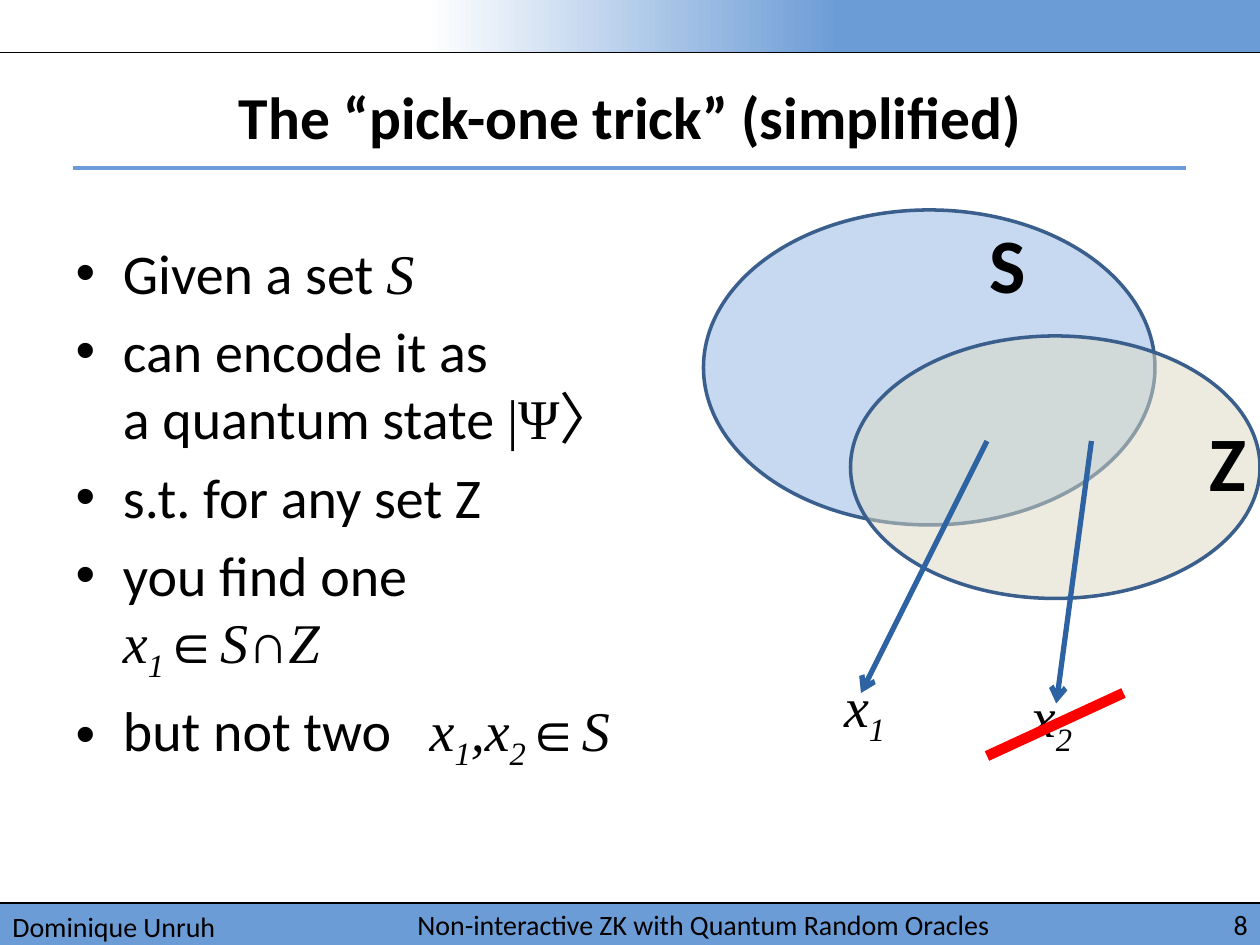
from lxml.etree import SubElement
from pptx import Presentation
from pptx.dml.color import RGBColor
from pptx.enum.shapes import MSO_CONNECTOR, MSO_SHAPE
from pptx.enum.text import MSO_ANCHOR, MSO_AUTO_SIZE, PP_ALIGN
from pptx.oxml.ns import qn
from pptx.util import Inches, Pt

# Grid of 120 columns by 90 rows, twelve to the inch
COLS, ROWS = 120, 90
UNIT = Inches(10) // COLS
SANS, SERIF = "Calibri", "Times New Roman"
BLUE, EDGE, ARROW = "6C9CD6", "3A5F8C", "2D63A2"
GAP = 1450  # extra width of a wide space, in hundredths of a point


def grid(*cells):
    return [round(cell * UNIT) for cell in cells]


def color(code):
    return RGBColor.from_string(code)


def style(font, size, name=SANS, bold=None, italic=None):
    font.size, font.name = Pt(size), name
    font.bold, font.italic = bold, italic
    font.color.rgb = color("000000")


def shape(slide, kind, box, fill=None, edge=None, alpha=None):
    form = slide.shapes.add_shape(kind, *grid(*box))
    form.shadow.inherit = False
    if fill:
        form.fill.solid()
        form.fill.fore_color.rgb = color(fill)
    if alpha:
        tint = form.fill._xPr.find(".//" + qn("a:srgbClr"))
        SubElement(tint, qn("a:alpha"), val=str(alpha * 1000))
    if edge:
        form.line.color.rgb = color(edge)
        form.line.width = Pt(2)
    else:
        form.line.fill.background()
    return form


def line(slide, ends, code, width, head=False):
    rule = slide.shapes.add_connector(MSO_CONNECTOR.STRAIGHT, *grid(*ends))
    rule.line.color.rgb = color(code)
    rule.line.width = Pt(width)
    if head:
        SubElement(rule.line._get_or_add_ln(), qn("a:tailEnd"), type="arrow")
    SubElement(rule._element.spPr, qn("a:effectLst"))


def label(slide, box, text, size, bold=None, align=PP_ALIGN.LEFT,
          anchor=MSO_ANCHOR.TOP, wrap=True):
    frame = slide.shapes.add_textbox(*grid(*box)).text_frame
    frame.word_wrap, frame.vertical_anchor = wrap, anchor
    frame.text = text
    para = frame.paragraphs[0]
    para.alignment = align
    style(para.runs[0].font, size, bold=bold)


def write(para, parts):
    """Add runs: plain, upright serif (r), italic (i), subscript (s), gap (g)."""
    for kind, text in parts:
        if kind == "br":
            para.add_line_break()
            continue
        run = para.add_run()
        run.text = text
        name = SERIF if kind in "ris" else SANS
        style(run.font, 32, name, italic=kind in "is")
        if kind == "s":
            run.font._element.set("baseline", "-25000")
        if kind == "g":
            run.font._element.set("spc", str(GAP))


def place(form, box):
    form.left, form.top, form.width, form.height = grid(*box)
    form.text_frame.auto_size = MSO_AUTO_SIZE.NONE
    return form.text_frame


def banner(slide, box):
    left, top, width, height = box
    form = shape(slide, MSO_SHAPE.RECTANGLE, (left + 32.75, top, width - 32.75, height))
    form.fill.gradient()
    form.fill.gradient_angle = 0
    for stop, (spot, code) in zip(form.fill.gradient_stops, [(0.09, "FFFFFF"), (0.54, BLUE)]):
        stop.position, stop.color.rgb = spot, color(code)
    line(slide, (left, top + height, left + width, top + height), "000000", 0.75)


def footer(slide, box):
    left, top, width, height = box
    shape(slide, MSO_SHAPE.RECTANGLE, box, BLUE)
    line(slide, (left, top, left + width, top), "000000", 0.75)
    mid = MSO_ANCHOR.MIDDLE
    label(slide, (left, top, 32.75, height), "Dominique Unruh", 16)
    label(slide, (left + 29, top, 76, height),
          "Non-interactive ZK with Quantum Random Oracles", 16,
          align=PP_ALIGN.CENTER, anchor=mid)
    label(slide, (left + width - 8, top, 8, height), "8", 16,
          align=PP_ALIGN.RIGHT, anchor=mid)


def heading(slide, box):
    left, top, width, height = box
    frame = place(slide.shapes.title, box)
    frame.text = "The “pick-one trick” (simplified)"
    frame.vertical_anchor = MSO_ANCHOR.MIDDLE
    para = frame.paragraphs[0]
    para.alignment = PP_ALIGN.CENTER
    style(para.runs[0].font, 34, bold=True)
    line(slide, (left, top + height, left + width, top + height), BLUE, 2)


def points(slide, box):
    frame = place(slide.placeholders[1], box)
    frame.margin_top = Inches(0.14)
    items = [
        [("p", "Given a set "), ("i", "S")],
        [("p", "can encode it as"), ("br", ""), ("p", "a quantum state "), ("r", "|Ψ〉")],
        [("p", "s.t. for any set Z")],
        [("p", "you find one"), ("br", ""), ("i", "x"), ("s", "1"),
         ("r", "∈"), ("i", "S"), ("r", "∩"), ("i", "Z")],
        [("p", "but not two"), ("g", " "), ("i", "x"), ("s", "1"),
         ("i", ",x"), ("s", "2"), ("r", "∈"), ("i", "S")],
    ]
    for index, parts in enumerate(items):
        para = frame.add_paragraph() if index else frame.paragraphs[0]
        if not index:
            para.space_before = Pt(0)
        write(para, parts)


def venn(slide, box):
    left, top, width, height = box
    # Overlapping sets
    shape(slide, MSO_SHAPE.OVAL, (left, top, 43, 30), "C6D9F1", EDGE)
    label(slide, (left + 26.1, top, 5.9, 10), "S", 44, bold=True, wrap=False)
    shape(slide, MSO_SHAPE.OVAL, (left + 14, top + 12, 39, 25), "DDD9C3", EDGE, 50)
    label(slide, (left + 47, top + 18.9, 6, 10), "Z", 44, bold=True, wrap=False)
    # Picked elements
    picks = [("1", (27, 22, 15, 46), (12.2, 43.4)),
             ("2", (36.95, 22, 33.6, 47), (30, 44.3))]
    for sub, (ax, ay, bx, by), (col, row) in picks:
        line(slide, (left + ax, top + ay, left + bx, top + by), ARROW, 3, head=True)
        form = slide.shapes.add_textbox(*grid(left + col, top + row, 6.6, 7.7))
        form.text_frame.word_wrap = False
        write(form.text_frame.paragraphs[0], [("i", "x"), ("s", sub)])
    # Strike through the second pick
    line(slide, (left + 27, top + height, left + 40, top + height - 6), "FF0000", 6)


def main():
    deck = Presentation()
    deck.slide_width, deck.slide_height = grid(COLS, ROWS)
    slide = deck.slides.add_slide(deck.slide_layouts[1])
    banner(slide, (0, 0, COLS, 5))
    footer(slide, (0, 86, COLS, 4))
    heading(slide, (7, 6, 106, 10))
    points(slide, (6, 21, 56, 59.4))
    venn(slide, (67, 20, 53, 52))
    deck.save("out.pptx")


if __name__ == "__main__":
    main()
